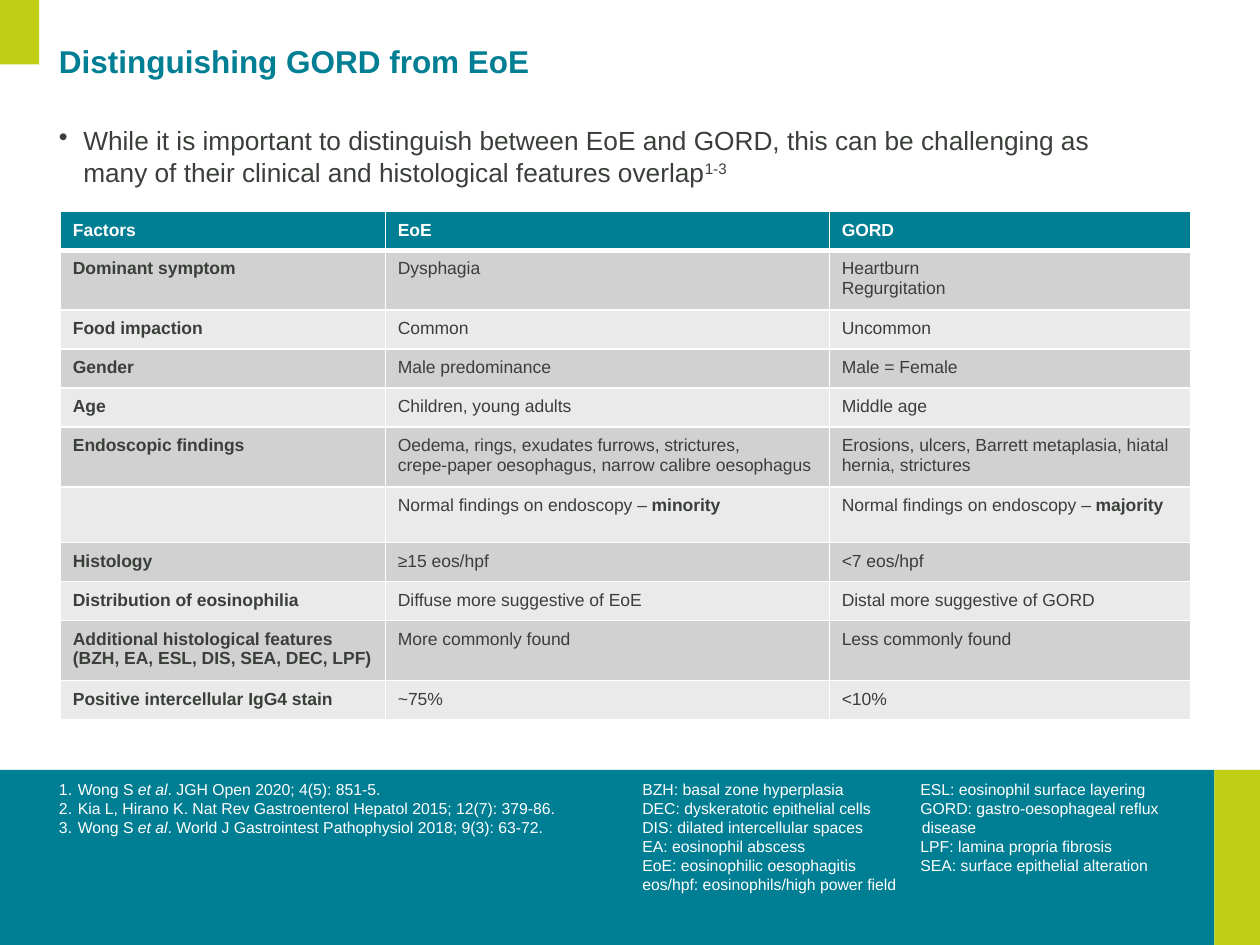
from lxml import etree
from pptx import Presentation
from pptx.dml.color import RGBColor
from pptx.enum.shapes import MSO_SHAPE
from pptx.enum.text import MSO_ANCHOR, PP_ALIGN
from pptx.oxml.ns import qn
from pptx.util import Cm, Pt

RECT = MSO_SHAPE.RECTANGLE
TOP = MSO_ANCHOR.TOP
LEFT = PP_ALIGN.LEFT

TEAL = RGBColor(0x00, 0x7E, 0x93)
LIME = RGBColor(0xC0, 0xCF, 0x15)
WHITE = RGBColor(0xFF, 0xFF, 0xFF)
INK = RGBColor(0x3A, 0x3F, 0x3A)
DARK_BAND = RGBColor(0xD1, 0xD1, 0xD1)
LIGHT_BAND = RGBColor(0xEA, 0xEA, 0xEA)
FONT = "Arial"

# Text between asterisks is emphasised
COLUMN_WIDTHS = [6.55, 8.95, 7.29]
SINGLE, NORMAL, DOUBLE = 0.75, 1.0, 1.14
ROWS = [
    (SINGLE, "Factors", "EoE", "GORD"),
    (DOUBLE, "Dominant symptom", "Dysphagia", "Heartburn\nRegurgitation"),
    (SINGLE, "Food impaction", "Common", "Uncommon"),
    (SINGLE, "Gender", "Male predominance", "Male = Female"),
    (SINGLE, "Age", "Children, young adults", "Middle age"),
    (DOUBLE, "Endoscopic findings",
     "Oedema, rings, exudates furrows, strictures,\n"
     "crepe-paper oesophagus, narrow calibre oesophagus",
     "Erosions, ulcers, Barrett metaplasia, hiatal hernia, strictures"),
    (NORMAL, "", "Normal findings on endoscopy – *minority*",
     "Normal findings on endoscopy – *majority*"),
    (SINGLE, "Histology", "≥15 eos/hpf", "<7 eos/hpf"),
    (SINGLE, "Distribution of eosinophilia",
     "Diffuse more suggestive of EoE", "Distal more suggestive of GORD"),
    (DOUBLE, "Additional histological features (BZH, EA, ESL, DIS, SEA, DEC, LPF)",
     "More commonly found", "Less commonly found"),
    (SINGLE, "Positive intercellular IgG4 stain", "~75%", "<10%"),
]
REFERENCES = [
    "Wong S *et al*. JGH Open 2020; 4(5): 851-5.",
    "Kia L, Hirano K. Nat Rev Gastroenterol Hepatol 2015; 12(7): 379-86.",
    "Wong S *et al*. World J Gastrointest Pathophysiol 2018; 9(3): 63-72.",
]
ABBREVIATIONS = [
    "BZH: basal zone hyperplasia",
    "DEC: dyskeratotic epithelial cells",
    "DIS: dilated intercellular spaces",
    "EA: eosinophil abscess",
    "EoE: eosinophilic oesophagitis",
    "eos/hpf: eosinophils/high power field",
    "ESL: eosinophil surface layering",
    "GORD: gastro-oesophageal reflux disease",
    "LPF: lamina propria fibrosis",
    "SEA: surface epithelial alteration",
]
KEY_POINT = ("While it is important to distinguish between EoE and GORD, this can be "
             "challenging as many of their clinical and histological features overlap*1-3*")


def add_runs(p, text, size, color, bold=False, emphasis=None):
    """Write text into a paragraph, with emphasis on the starred parts."""
    p.alignment = LEFT
    for i, part in enumerate(text.split("*")):
        for j, line in enumerate(part.split("\n")):
            if j:
                br = etree.SubElement(p._p, qn("a:br"))
                etree.SubElement(br, qn("a:rPr"), sz=str(size * 100))
            r = p.add_run()
            r.text = line
            r.font.name, r.font.size, r.font.bold = FONT, Pt(size), bold
            r.font.color.rgb = color
            if i % 2 and emphasis == "superscript":
                r.font._element.set("baseline", "30000")
            elif i % 2:
                setattr(r.font, emphasis, True)


def add_bar(slide, left, top, width, height, color):
    sp = slide.shapes.add_shape(RECT, Cm(left), Cm(top), Cm(width), Cm(height))
    sp.shadow.inherit = False
    sp.fill.solid()
    sp.fill.fore_color.rgb = color
    sp.line.fill.background()


def add_text(slide, box, lines, size, color, insets=(0, 0, 0, 0), bold=False,
             emphasis=None, indent=0, bullet=None):
    """Add a text box; bullet is a (tag, attribute, value) triple."""
    sp = slide.shapes.add_textbox(*(Cm(v) for v in box))
    tf = sp.text_frame
    tf.word_wrap = True
    tf.vertical_anchor = TOP
    tf.margin_left, tf.margin_top, tf.margin_right, tf.margin_bottom = map(Cm, insets)
    for i, line in enumerate(lines):
        p = tf.add_paragraph() if i else tf.paragraphs[0]
        pPr = p._p.get_or_add_pPr()
        pPr.set("marL", str(Cm(indent)))
        pPr.set("indent", str(-Cm(indent)))
        if bullet:
            tag, name, value = bullet
            etree.SubElement(pPr, qn(tag)).set(name, value)
        add_runs(p, line, size, color, bold, emphasis)
    return sp


def set_borders(cell, widths):
    tcPr = cell._tc.get_or_add_tcPr()
    for side, width in zip("LRTB", widths):
        ln = etree.SubElement(tcPr, qn(f"a:ln{side}"), w=str(Pt(width)))
        fill = etree.SubElement(ln, qn("a:solidFill"))
        etree.SubElement(fill, qn("a:srgbClr"), val=str(WHITE))


def add_comparison_table(slide):
    heights = [row[0] for row in ROWS]
    table = slide.shapes.add_table(
        len(ROWS), len(COLUMN_WIDTHS), Cm(1.22), Cm(4.26),
        Cm(sum(COLUMN_WIDTHS)), Cm(sum(heights))).table
    for column, width in zip(table.columns, COLUMN_WIDTHS):
        column.width = Cm(width)
    for i, (height, *texts) in enumerate(ROWS):
        table.rows[i].height = Cm(height)
        band = TEAL if i == 0 else DARK_BAND if i % 2 else LIGHT_BAND
        for j, text in enumerate(texts):
            cell = table.cell(i, j)
            cell.margin_left = cell.margin_right = Cm(0.25)
            cell.margin_top = cell.margin_bottom = Cm(0.18)
            set_borders(cell, (1, 1, 3 if i == 1 else 1, 3 if i == 0 else 1))
            cell.fill.solid()
            cell.fill.fore_color.rgb = band
            add_runs(cell.text_frame.paragraphs[0], text, 10,
                     INK if i else WHITE, i == 0 or j == 0, "bold")


def main():
    prs = Presentation()
    prs.slide_width, prs.slide_height = Cm(25.4), Cm(19.05)
    slide = prs.slides.add_slide(prs.slide_layouts[6])

    # Footer band and accents
    add_bar(slide, 0, 15.52, 24.48, 3.53, TEAL)
    add_bar(slide, 24.48, 15.52, 0.92, 3.53, LIME)
    add_bar(slide, 0, 0, 0.79, 1.3, LIME)

    # Footer texts
    footer_insets = (0, 0.2, 0.3, 0)
    add_text(slide, (1.19, 15.52, 16.54, 3.53), REFERENCES, 9, WHITE, footer_insets,
             emphasis="italic", indent=0.38,
             bullet=("a:buAutoNum", "type", "arabicPeriod"))
    sp = add_text(slide, (12.95, 15.52, 11.51, 2.67), ABBREVIATIONS, 9, WHITE,
                  footer_insets, indent=0.03)
    sp.text_frame._txBody.bodyPr.set("numCol", "2")

    # Title
    sp = add_text(slide, (1.19, 0.46, 19, 1.73), ["Distinguishing GORD from EoE"],
                  18, TEAL, bold=True)
    sp.fill.solid()
    sp.fill.fore_color.rgb = WHITE
    sp.text_frame.paragraphs[0].line_spacing = 1.5

    # Table and key point
    add_comparison_table(slide)
    add_text(slide, (1.19, 2.51, 21.92, 1.93), [KEY_POINT], 15, INK,
             emphasis="superscript", indent=0.49, bullet=("a:buChar", "char", "•"))

    prs.save("out.pptx")


if __name__ == "__main__":
    main()
